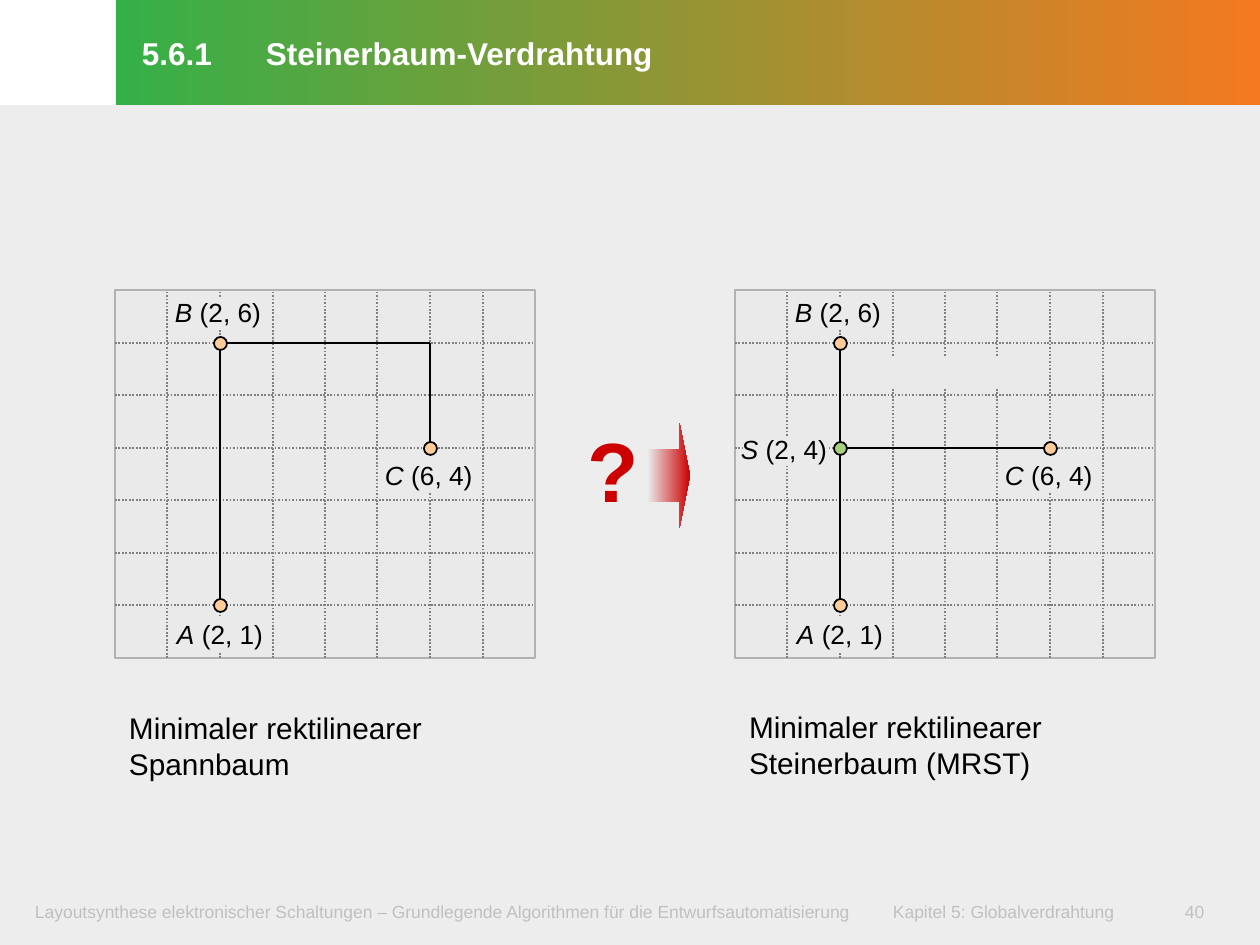
"""Build the slide on Steiner tree routing with two grid panels."""
from dataclasses import dataclass

import pptx
import pptx.dml.color
import pptx.enum.dml
import pptx.enum.shapes
import pptx.enum.text
import pptx.oxml
import pptx.oxml.ns
import pptx.util

RGBColor = pptx.dml.color.RGBColor
Shape = pptx.enum.shapes.MSO_SHAPE
Anchor = pptx.enum.text.MSO_ANCHOR

PX_PER_INCH = 126
FONT = "Arial"
BLACK = RGBColor(0x00, 0x00, 0x00)
WHITE = RGBColor(0xFF, 0xFF, 0xFF)
PAGE_GRAY = RGBColor(0xED, 0xED, 0xED)
PANEL_GRAY = RGBColor(0xEA, 0xEA, 0xEA)
BORDER_GRAY = RGBColor(0xB2, 0xB2, 0xB2)
GRID_GRAY = RGBColor(0x80, 0x80, 0x80)
FOOTER_GRAY = RGBColor(0xC0, 0xC0, 0xC0)
RED = RGBColor(0xCC, 0x00, 0x00)
GREEN = RGBColor(0x35, 0xB0, 0x48)
ORANGE = RGBColor(0xF4, 0x79, 0x20)
PIN_FILL = RGBColor(0xFF, 0xCC, 0x99)
STEINER_FILL = RGBColor(0xA7, 0xCE, 0x7C)

COLUMNS, ROWS = 8, 7
PANEL_TOP, PANEL_WIDTH, PANEL_HEIGHT = 290, 420, 368
NODE_SIZE = 13
LABEL_INSETS = (14, 6, 14, 6)
FOOTER_INSETS = (15, 8, 15, 8)
TITLE_INSETS = (26, 6, 13, 9)


@dataclass(frozen=True)
class Span:
    text: str
    size: int
    color: RGBColor = BLACK
    bold: bool = False
    italic: bool = False


@dataclass(frozen=True)
class Node:
    name: str
    x: int
    y: int
    label: tuple[int, int, int, int]
    mask: tuple[int, int, int, int]
    fill: RGBColor = PIN_FILL


@dataclass(frozen=True)
class Wire:
    start: tuple[int, int]
    end: tuple[int, int]
    head: bool = False
    tail: bool = False


@dataclass(frozen=True)
class Panel:
    left: int
    nodes: list[Node]
    wires: list[Wire]
    caption: str
    caption_box: tuple[int, int, int, int]
    extra_masks: tuple[tuple[int, int, int, int], ...] = ()


A = Node("A", 2, 1, (48, 322, 122, 44), (55, 327, 102, 34))
B = Node("B", 2, 6, (46, 0, 166, 44), (55, 7, 102, 32))
C = Node("C", 6, 4, (256, 163, 122, 44), (263, 164, 101, 37))
S = Node("S", 2, 4, (-8, 137, 166, 44), (8, 147, 86, 29), STEINER_FILL)

PANELS = [
    Panel(115, [A, B, C],
          [Wire((2, 6), (2, 1), True, True), Wire((2, 6), (6, 6)),
           Wire((6, 6), (6, 4), tail=True)],
          "Minimaler rektilinearer Spannbaum", (115, 704, 335, 84)),
    Panel(735, [A, B, C, S],
          [Wire((2, 6), (2, 1), True, True), Wire((2, 4), (6, 4), True, True)],
          "Minimaler rektilinearer Steinerbaum (MRST)", (735, 703, 335, 84),
          ((147, 67, 158, 30),)),
]


def px(length: int) -> pptx.util.Emu:
    return pptx.util.Emu(round(length * 914400 / PX_PER_INCH))


def set_gradient(shape, start: RGBColor, end: RGBColor) -> None:
    shape.fill.gradient()
    shape.fill.gradient_angle = 0
    for stop, color in zip(shape.fill.gradient_stops, (start, end)):
        stop.color.rgb = color


def add_shape(page, kind, left: int, top: int, width: int, height: int,
              fill: RGBColor, line: RGBColor | None = None, weight: float = 1):
    shape = page.shapes.add_shape(kind, px(left), px(top), px(width), px(height))
    shape.shadow.inherit = False
    shape.fill.solid()
    shape.fill.fore_color.rgb = fill
    if line is None:
        shape.line.fill.background()
    else:
        shape.line.color.rgb = line
        shape.line.width = pptx.util.Pt(weight)
    return shape


def add_line(page, start: tuple[int, int], end: tuple[int, int], color: RGBColor,
             weight: float, dotted: bool = False, head: bool = False,
             tail: bool = False) -> None:
    line = page.shapes.add_connector(
        pptx.enum.shapes.MSO_CONNECTOR.STRAIGHT, *map(px, start + end))
    line.line.color.rgb = color
    line.line.width = pptx.util.Pt(weight)
    if dotted:
        line.line.dash_style = pptx.enum.dml.MSO_LINE.ROUND_DOT
    outline = line.line._get_or_add_ln()
    for tag, wanted in (("a:headEnd", head), ("a:tailEnd", tail)):
        if wanted:
            outline.append(pptx.oxml.parse_xml(
                f'<{tag} {pptx.oxml.ns.nsdecls("a")} type="oval"/>'))
    line._element.spPr.append(pptx.oxml.parse_xml(
        f'<a:effectLst {pptx.oxml.ns.nsdecls("a")}/>'))


def write(box, spans: list[Span], insets: tuple[int, int, int, int],
          wrap: bool = True, tab: int | None = None):
    frame = box.text_frame
    frame.word_wrap = wrap
    frame.margin_left, frame.margin_top, frame.margin_right, frame.margin_bottom = map(px, insets)
    para = frame.paragraphs[0]
    para.alignment = pptx.enum.text.PP_ALIGN.LEFT
    if tab is not None:
        para._p.get_or_add_pPr().append(pptx.oxml.parse_xml(
            f'<a:tabLst {pptx.oxml.ns.nsdecls("a")}><a:tab pos="{px(tab)}" algn="l"/></a:tabLst>'))
    for span in spans:
        run = para.add_run()
        run.text = span.text
        run.font.name = FONT
        run.font.size = pptx.util.Pt(span.size)
        run.font.bold = span.bold
        run.font.italic = span.italic
        run.font.color.rgb = span.color
    return para


def add_text(page, bounds: tuple[int, int, int, int], spans: list[Span],
             insets: tuple[int, int, int, int] = LABEL_INSETS,
             wrap: bool = True, tab: int | None = None) -> None:
    write(page.shapes.add_textbox(*map(px, bounds)), spans, insets, wrap, tab)


def draw_panel(page, panel: Panel) -> None:
    bottom = PANEL_TOP + PANEL_HEIGHT

    def at(x: int, y: int) -> tuple[int, int]:
        return (panel.left + round(PANEL_WIDTH * x / COLUMNS),
                bottom - round(PANEL_HEIGHT * y / ROWS))

    add_shape(page, Shape.RECTANGLE, panel.left, PANEL_TOP, PANEL_WIDTH,
              PANEL_HEIGHT, PANEL_GRAY, BORDER_GRAY, 0.75)
    for row in range(1, ROWS):
        add_line(page, at(0, row), at(COLUMNS, row), GRID_GRAY, 1, dotted=True)
    for column in range(1, COLUMNS):
        add_line(page, at(column, 0), at(column, ROWS), GRID_GRAY, 1, dotted=True)
    for left, top, width, height in (*(node.mask for node in panel.nodes), *panel.extra_masks):
        add_shape(page, Shape.RECTANGLE, panel.left + left, PANEL_TOP + top,
                  width, height, PANEL_GRAY)
    for wire in panel.wires:
        add_line(page, at(*wire.start), at(*wire.end), BLACK, 1.5,
                 head=wire.head, tail=wire.tail)
    for node in panel.nodes:
        left, top, width, height = node.label
        add_text(page, (panel.left + left, PANEL_TOP + top, width, height),
                 [Span(node.name, 15, italic=True), Span(f" ({node.x}, {node.y})", 15)])
        x, y = at(node.x, node.y)
        add_shape(page, Shape.OVAL, x - NODE_SIZE // 2, y - NODE_SIZE // 2,
                  NODE_SIZE, NODE_SIZE, node.fill, BLACK)
    add_text(page, panel.caption_box, [Span(panel.caption, 17)])


def draw_title(page) -> None:
    title = page.shapes.title
    title.left, title.top, title.width, title.height = map(px, (116, 0, 1144, 105))
    set_gradient(title, GREEN, ORANGE)
    title.text_frame.vertical_anchor = Anchor.MIDDLE
    para = write(title, [Span("5.6.1\tSteinerbaum-Verdrahtung", 18, WHITE, bold=True)],
                 TITLE_INSETS, tab=124)
    para.line_spacing = pptx.util.Pt(23.5)


def main() -> None:
    deck = pptx.Presentation()
    deck.slide_width, deck.slide_height = px(1260), px(945)
    page = deck.slides.add_slide(deck.slide_layouts[5])
    add_shape(page, Shape.RECTANGLE, 0, 105, 1260, 840, PAGE_GRAY)
    draw_title(page)
    add_text(page, (20, 893, 1192, 40), [Span(
        "Layoutsynthese elektronischer Schaltungen – Grundlegende Algorithmen für die "
        "Entwurfsautomatisierung\tKapitel 5: Globalverdrahtung", 10, FOOTER_GRAY)],
        FOOTER_INSETS, tab=858)
    add_text(page, (1170, 893, 74, 40), [Span("40", 10, FOOTER_GRAY)], FOOTER_INSETS)
    for panel in PANELS:
        draw_panel(page, panel)
    add_text(page, (562, 413, 91, 116), [Span("?", 48, RED, bold=True)],
             TITLE_INSETS, wrap=False)
    arrow = add_shape(page, Shape.RIGHT_ARROW, 648, 423, 42, 105, RED)
    arrow.adjustments[0], arrow.adjustments[1] = 0.5, 0.25
    set_gradient(arrow, PANEL_GRAY, RED)
    deck.save("out.pptx")


if __name__ == "__main__":
    main()
